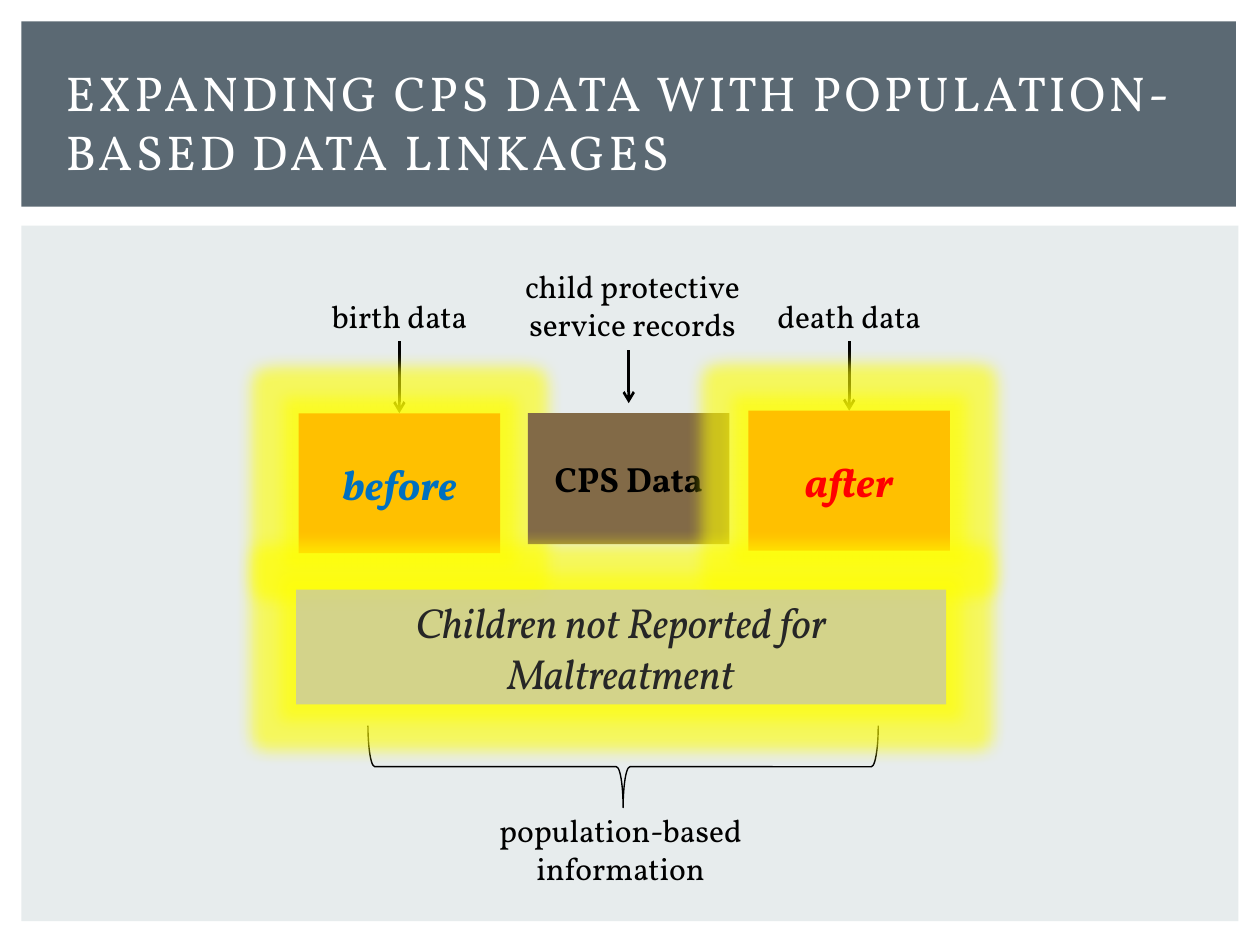
import pptx
import pptx.util
import pptx.dml.color
import pptx.enum.shapes
import pptx.enum.text
import pptx.oxml
import pptx.oxml.ns
import lxml.etree

CELL = 0.1
FONT = "Vollkorn"
KIND = pptx.enum.shapes.MSO_SHAPE
SIDE = pptx.enum.text.PP_ALIGN
ROW = pptx.enum.text.MSO_ANCHOR
HUES = {
    "panel": "E7ECED", "banner": "5B6973", "white": "FFFFFF",
    "black": "000000", "gold": "FFC000", "brown": "826A47",
    "gray": "BFBFBF", "dark": "262626", "blue": "0070C0",
    "red": "FF0000", "glow": "FFFF00",
}


def grid(*cells):
    """Turn grid columns and rows into lengths."""
    return [pptx.util.Inches(round(cell * CELL, 3)) for cell in cells]


def hue(name):
    """Look up a colour by name."""
    return pptx.dml.color.RGBColor.from_string(HUES[name])


def node(parent, tag, **attrs):
    """Add a drawing element under a parent."""
    return lxml.etree.SubElement(parent, pptx.oxml.ns.qn("a:" + tag), attrs)


def write(shape, text, size=18, color="black", bold=False, slant=False,
          align=SIDE.CENTER, anchor=ROW.MIDDLE, track=None):
    """Put formatted text in a shape."""
    frame = shape.text_frame
    frame.word_wrap = True
    frame.auto_size = pptx.enum.text.MSO_AUTO_SIZE.NONE
    frame.vertical_anchor = anchor
    para = frame.paragraphs[0]
    para.alignment = align
    run = para.add_run()
    run.text = text
    font = run.font
    font.name, font.size = FONT, pptx.util.Pt(size)
    font.bold, font.italic = bold, slant
    font.color.rgb = hue(color)
    if track:
        font._element.set("spc", str(track * 100))


def label(slide, text, *spot):
    """Add a centred caption."""
    box = slide.shapes.add_textbox(*grid(*spot))
    write(box, text, anchor=ROW.TOP)
    return box


def block(slide, fill, *spot, alpha=None, glow=False):
    """Add a filled rectangle, with optional glow."""
    box = slide.shapes.add_shape(KIND.RECTANGLE, *grid(*spot))
    box.fill.solid()
    box.fill.fore_color.rgb = hue(fill)
    box.line.fill.background()
    box.shadow.inherit = False
    props = box._element.spPr
    if alpha:
        node(props.find(".//" + pptx.oxml.ns.qn("a:srgbClr")),
             "alpha", val=str(alpha * 1000))
    if glow:
        halo = node(props.find(pptx.oxml.ns.qn("a:effectLst")),
                    "glow", rad=str(pptx.util.Pt(18)))
        node(node(halo, "srgbClr", val=HUES["glow"]), "alpha", val="60000")
    return box


def arrow(slide, col, top, end):
    """Add a downward arrow."""
    line = slide.shapes.add_connector(
        pptx.enum.shapes.MSO_CONNECTOR.STRAIGHT, *grid(col, top, col, end))
    line.line.color.rgb = hue("black")
    line.line.width = pptx.util.Pt(1.5)
    node(line.line._get_or_add_ln(), "tailEnd", type="arrow")
    node(line._element.spPr, "effectLst")
    return line


def brace(slide, *spot):
    """Add a brace that opens upward."""
    mark = slide.shapes.add_shape(KIND.RIGHT_BRACE, *grid(*spot))
    mark.rotation = 90
    mark.fill.background()
    mark.line.color.rgb = hue("black")
    mark.line.width = pptx.util.Pt(0.79)
    mark.shadow.inherit = False


def head(slide, text):
    """Lay the panels and set the title on the banner."""
    block(slide, "panel", 1.7, 17.9, 96.6, 55.2)
    block(slide, "banner", 1.7, 1.7, 96.4, 14.7)
    title = slide.shapes.title
    title.left, title.top, title.width, title.height = grid(
        4.2, 3.9, 91.7, 11.5)
    write(title, text, size=28, color="white", align=SIDE.LEFT, track=2)
    slide.shapes._spTree.append(title._element)


def main():
    """Build and save the slide."""
    deck = pptx.Presentation()
    deck.slide_width, deck.slide_height = grid(100, 75)
    slide = deck.slides.add_slide(deck.slide_layouts[5])
    head(slide, "EXPANDING CPS DATA WITH POPULATION-BASED DATA LINKAGES")

    birth = label(slide, "birth data", 24.6, 23.1, 14.2, 4)
    death = label(slide, "death data", 58.6, 23.1, 17.6, 4)
    first = arrow(slide, 31.7, 27.1, 32.8)
    last = arrow(slide, 67.4, 27.1, 32.6)
    brace(slide, 46.2, 40.6, 6.5, 40.5)
    label(slide, "population-based information", 33.1, 63.9, 32.3, 7.1)
    label(slide, "child protective service records", 39.6, 20.7, 21.2, 7.1)
    arrow(slide, 49.9, 27.8, 32)

    before = block(slide, "gold", 23.7, 32.8, 16, 11.1, glow=True)
    write(before, "before", size=24, color="blue", bold=True, slant=True)
    middle = block(slide, "brown", 41.9, 32.8, 16, 10.4)
    write(middle, "CPS Data", size=20, bold=True)
    after = block(slide, "gold", 59.4, 32.6, 16, 11.1, glow=True)
    write(after, "after", size=24, color="red", bold=True, slant=True)
    rest = block(slide, "gray", 23.5, 46.8, 51.6, 9.1, alpha=66, glow=True)
    write(rest, "Children not Reported for Maltreatment",
          size=24, color="dark", slant=True)

    for line, start, end in ((first, birth, before), (last, death, after)):
        line.begin_connect(start, 2)
        line.end_connect(end, 0)
    deck.save("out.pptx")


if __name__ == "__main__":
    main()
